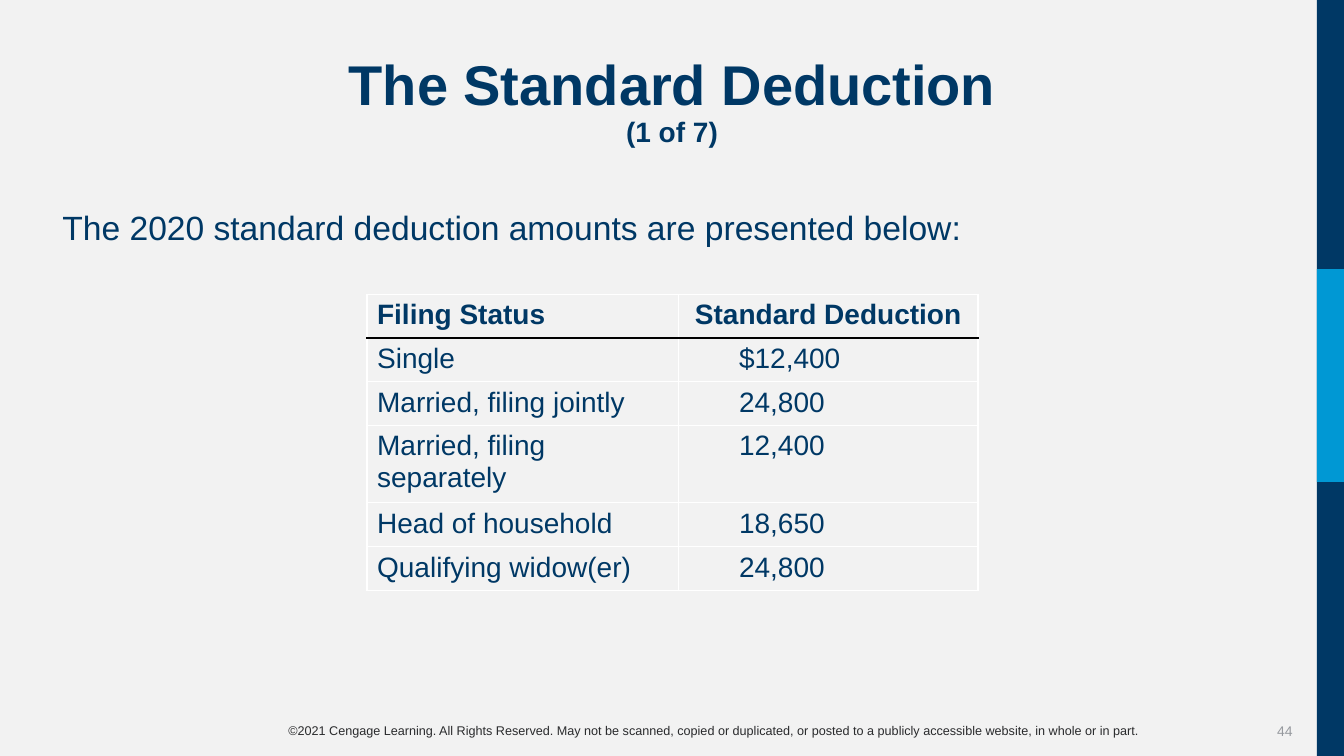
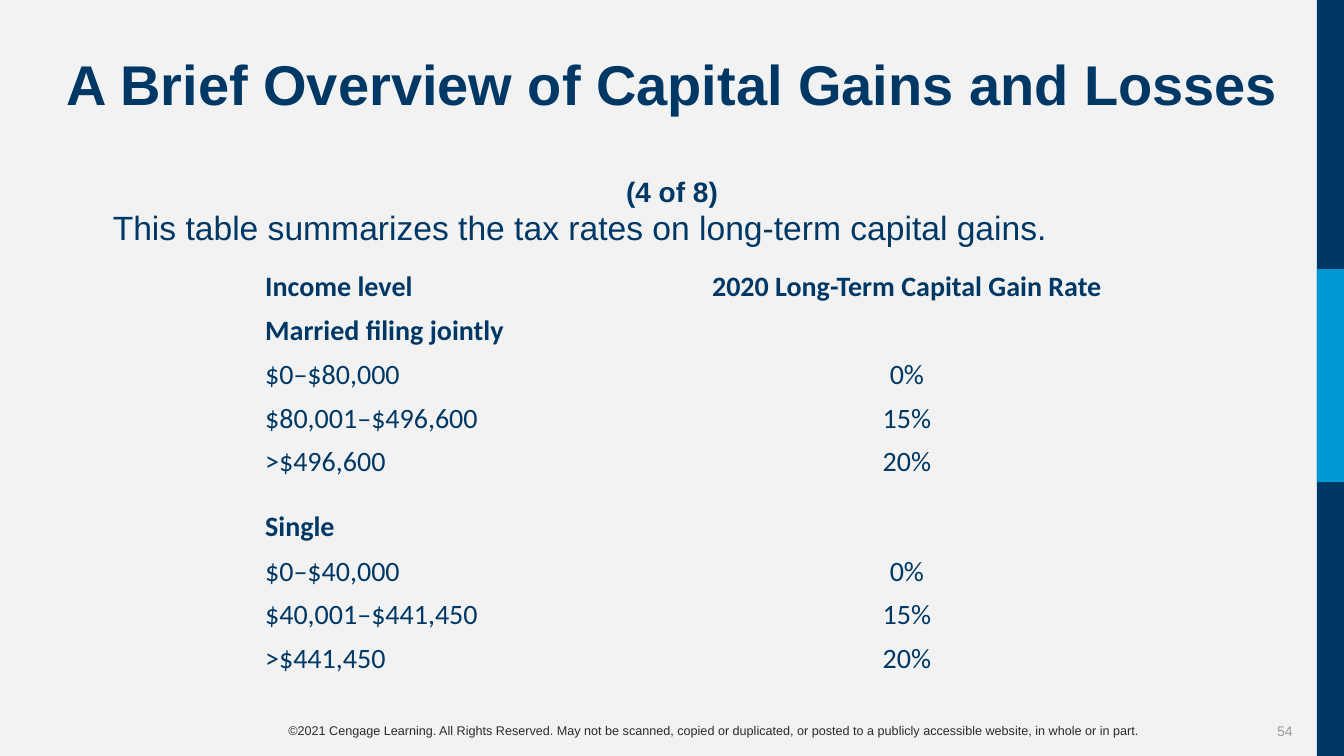
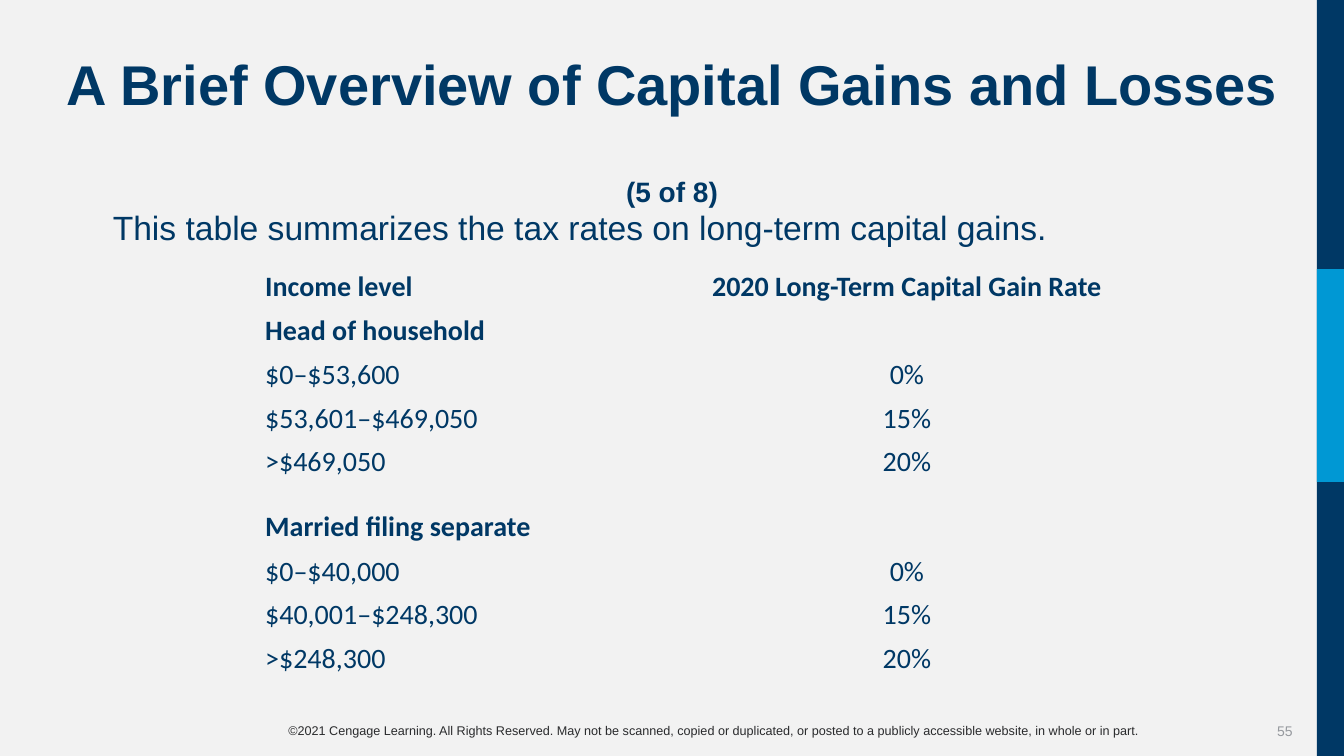
from dataclasses import dataclass

from lxml import etree
from pptx import Presentation
from pptx.dml.color import RGBColor
from pptx.enum.shapes import MSO_SHAPE
from pptx.enum.text import MSO_ANCHOR, MSO_AUTO_SIZE, PP_ALIGN
from pptx.oxml.ns import qn
from pptx.presentation import Presentation as Deck
from pptx.slide import Slide
from pptx.table import Table, _Cell
from pptx.text.text import _Paragraph
from pptx.util import Inches, Pt

RECTANGLE = MSO_SHAPE.RECTANGLE
NO_AUTOFIT = MSO_AUTO_SIZE.NONE
LEFT, CENTER, RIGHT = PP_ALIGN.LEFT, PP_ALIGN.CENTER, PP_ALIGN.RIGHT
TOP, MIDDLE, BOTTOM = MSO_ANCHOR.TOP, MSO_ANCHOR.MIDDLE, MSO_ANCHOR.BOTTOM

COLORS = {
    "background": "F2F2F2",
    "navy": "003865",
    "blue": "0098D4",
    "footer": "2A2B2D",
    "page": "96999E",
    "grid": "FFFFFF",
    "rule": "000000",
}
COPYRIGHT = (
    "©2021 Cengage Learning. All Rights Reserved. May not be scanned, copied or "
    "duplicated, or posted to a publicly accessible website, in whole or in part."
)
CONTENT_LEFT, CONTENT_WIDTH = 0.52, 12.29
ROW_HEIGHT, GROUP_ROW_HEIGHT = 0.41, 0.65
NO_STYLE_NO_GRID = "{2D5ABB26-0587-4C30-8999-92F81FD0307C}"

STANDARD_DEDUCTIONS = [
    ("Single", "$12,400"),
    ("Married, filing jointly", "24,800"),
    ("Married, filing separately", "12,400"),
    ("Head of household", "18,650"),
    ("Qualifying widow(er)", "24,800"),
]
GAIN_RATES = ("0%", "15%", "20%")


@dataclass
class Band:
    top: float
    height: float
    color: str


@dataclass
class FilingGroup:
    status: str
    incomes: tuple[str, str, str]


@dataclass
class GainsSlide:
    sequence: str
    page: int
    groups: list[FilingGroup]


BANDS = [Band(0, 7.5, "navy"), Band(2.67, 2.11, "blue")]

GAINS_SLIDES = [
    GainsSlide("(4 of 8)", 54, [
        FilingGroup("Married filing jointly",
                    ("$0–$80,000", "$80,001–$496,600", ">$496,600")),
        FilingGroup("Single",
                    ("$0–$40,000", "$40,001–$441,450", ">$441,450")),
    ]),
    GainsSlide("(5 of 8)", 55, [
        FilingGroup("Head of household",
                    ("$0–$53,600", "$53,601–$469,050", ">$469,050")),
        FilingGroup("Married filing separate",
                    ("$0–$40,000", "$40,001–$248,300", ">$248,300")),
    ]),
]


def rgb(name: str) -> RGBColor:
    return RGBColor.from_string(COLORS[name])


def style(paragraph: _Paragraph, size: float, color: str = "navy", bold: bool = False,
          align: PP_ALIGN = LEFT, face: str = "Arial") -> None:
    paragraph.alignment = align
    font = paragraph.font
    font.name, font.size, font.bold = face, Pt(size), bold
    font.color.rgb = rgb(color)


def add_text(slide: Slide, text: str, left: float, top: float, width: float, height: float,
             size: float, color: str = "navy", align: PP_ALIGN = LEFT,
             anchor: MSO_ANCHOR = TOP) -> None:
    box = slide.shapes.add_textbox(Inches(left), Inches(top), Inches(width), Inches(height))
    frame = box.text_frame
    frame.word_wrap = True
    frame.vertical_anchor = anchor
    frame.text = text
    style(frame.paragraphs[0], size, color, align=align)


def add_page(deck: Deck, heading: str, sequence: str, page: int) -> Slide:
    """Add a slide with the shared footer, side bands and two-line title."""
    slide = deck.slides.add_slide(deck.slide_layouts[5])

    # Footer
    add_text(slide, str(page), 12.12, 7.05, 0.8, 0.4, 10, "page", RIGHT, MIDDLE)
    add_text(slide, COPYRIGHT, 1.82, 7.12, 10.51, 0.25, 9, "footer", CENTER)

    # Side bands
    for band in BANDS:
        bar = slide.shapes.add_shape(RECTANGLE, Inches(13.06), Inches(band.top),
                                     Inches(0.28), Inches(band.height))
        bar.shadow.inherit = False
        bar.fill.solid()
        bar.fill.fore_color.rgb = rgb(band.color)
        bar.line.fill.background()

    # Title
    title = slide.shapes.title
    title.left, title.top = Inches(CONTENT_LEFT), Inches(0.52)
    title.width, title.height = Inches(CONTENT_WIDTH), Inches(1.33)
    frame = title.text_frame
    frame.auto_size = NO_AUTOFIT
    frame.vertical_anchor = TOP
    paragraph = frame.paragraphs[0]
    paragraph.text = f"{heading}\v{sequence}"
    paragraph.line_spacing = 0.9
    style(paragraph, 40, bold=True, align=CENTER)
    paragraph.runs[-1].font.size = Pt(20)
    return slide


def add_plain_table(slide: Slide, left: float, top: float, column_widths: tuple[float, ...],
                    row_heights: list[float]) -> Table:
    """Add a table without style, banding or fills."""
    frame = slide.shapes.add_table(
        len(row_heights), len(column_widths), Inches(left), Inches(top),
        Inches(sum(column_widths)), Inches(sum(row_heights)))
    table = frame.table
    table.first_row = table.horz_banding = False
    frame._element.find(".//" + qn("a:tableStyleId")).text = NO_STYLE_NO_GRID
    for column, width in zip(table.columns, column_widths):
        column.width = Inches(width)
    for row, height in zip(table.rows, row_heights):
        row.height = Inches(height)
    for cell in table.iter_cells():
        cell.fill.background()
    return table


def set_cell(cell: _Cell, text: str, bold: bool = False, align: PP_ALIGN = LEFT,
             face: str = "Arial", anchor: MSO_ANCHOR = TOP) -> None:
    cell.text = text
    cell.vertical_anchor = anchor
    style(cell.text_frame.paragraphs[0], 20, bold=bold, align=align, face=face)


def set_borders(cell: _Cell, top: str, bottom: str) -> None:
    properties = cell._tc.get_or_add_tcPr()
    sides = {"lnL": "grid", "lnR": "grid", "lnT": top, "lnB": bottom}
    for position, (side, color) in enumerate(sides.items()):
        line = etree.Element(qn(f"a:{side}"), w=str(Pt(1)))
        fill = etree.SubElement(line, qn("a:solidFill"))
        etree.SubElement(fill, qn("a:srgbClr"), val=COLORS[color])
        properties.insert(position, line)


def add_right_tab(paragraph: _Paragraph, position: float) -> None:
    tabs = etree.SubElement(paragraph._p.get_or_add_pPr(), qn("a:tabLst"))
    etree.SubElement(tabs, qn("a:tab"), pos=str(Inches(position)), algn="r")


def add_deduction_slide(deck: Deck) -> None:
    slide = add_page(deck, "The Standard Deduction", "(1 of 7)", 44)
    add_text(slide, "The 2020 standard deduction amounts are presented below:",
             CONTENT_LEFT, 2, CONTENT_WIDTH, 1.12, 24)

    row_count = len(STANDARD_DEDUCTIONS) + 1
    table = add_plain_table(slide, 3.64, 2.92, (3.09, 2.97), [ROW_HEIGHT] * row_count)
    set_cell(table.cell(0, 0), "Filing Status", bold=True)
    set_cell(table.cell(0, 1), "Standard Deduction", bold=True, align=CENTER)
    for row, (status, amount) in enumerate(STANDARD_DEDUCTIONS, start=1):
        set_cell(table.cell(row, 0), status)
        amount_cell = table.cell(row, 1)
        add_right_tab(amount_cell.text_frame.paragraphs[0], 1.93)
        set_cell(amount_cell, f"\t{amount}")

    # White grid with a black rule below the header
    for row in range(row_count):
        for column in range(2):
            set_borders(table.cell(row, column),
                        top="rule" if row == 1 else "grid",
                        bottom="rule" if row == 0 else "grid")


def add_gains_slide(deck: Deck, content: GainsSlide) -> None:
    # The space before the break pushes the sequence number down one line
    slide = add_page(deck, "A Brief Overview of Capital Gains and Losses ",
                     content.sequence, content.page)
    indent = 0.5
    add_text(slide, "This table summarizes the tax rates on long-term capital gains.",
             CONTENT_LEFT + indent, 2, CONTENT_WIDTH - indent, 0.88, 24)

    heights = [ROW_HEIGHT]
    for index in range(len(content.groups)):
        heights.append(GROUP_ROW_HEIGHT if index else ROW_HEIGHT)
        heights += [ROW_HEIGHT] * len(GAIN_RATES)
    table = add_plain_table(slide, 2.53, 2.63, (3.46, 6.01), heights)

    face = "Calibri"
    set_cell(table.cell(0, 0), "Income level", True, LEFT, face, BOTTOM)
    set_cell(table.cell(0, 1), "2020 Long-Term Capital Gain Rate", True, CENTER, face, BOTTOM)
    row = 1
    for group in content.groups:
        set_cell(table.cell(row, 0), group.status, True, LEFT, face, BOTTOM)
        for row, (income, rate) in enumerate(zip(group.incomes, GAIN_RATES), start=row + 1):
            set_cell(table.cell(row, 0), income, face=face)
            set_cell(table.cell(row, 1), rate, align=CENTER, face=face)
        row += 1


def main() -> None:
    deck = Presentation()
    deck.slide_width, deck.slide_height = Inches(13.33), Inches(7.5)
    background = deck.slide_master.background.fill
    background.solid()
    background.fore_color.rgb = rgb("background")

    add_deduction_slide(deck)
    for content in GAINS_SLIDES:
        add_gains_slide(deck, content)
    deck.save("out.pptx")


if __name__ == "__main__":
    main()
